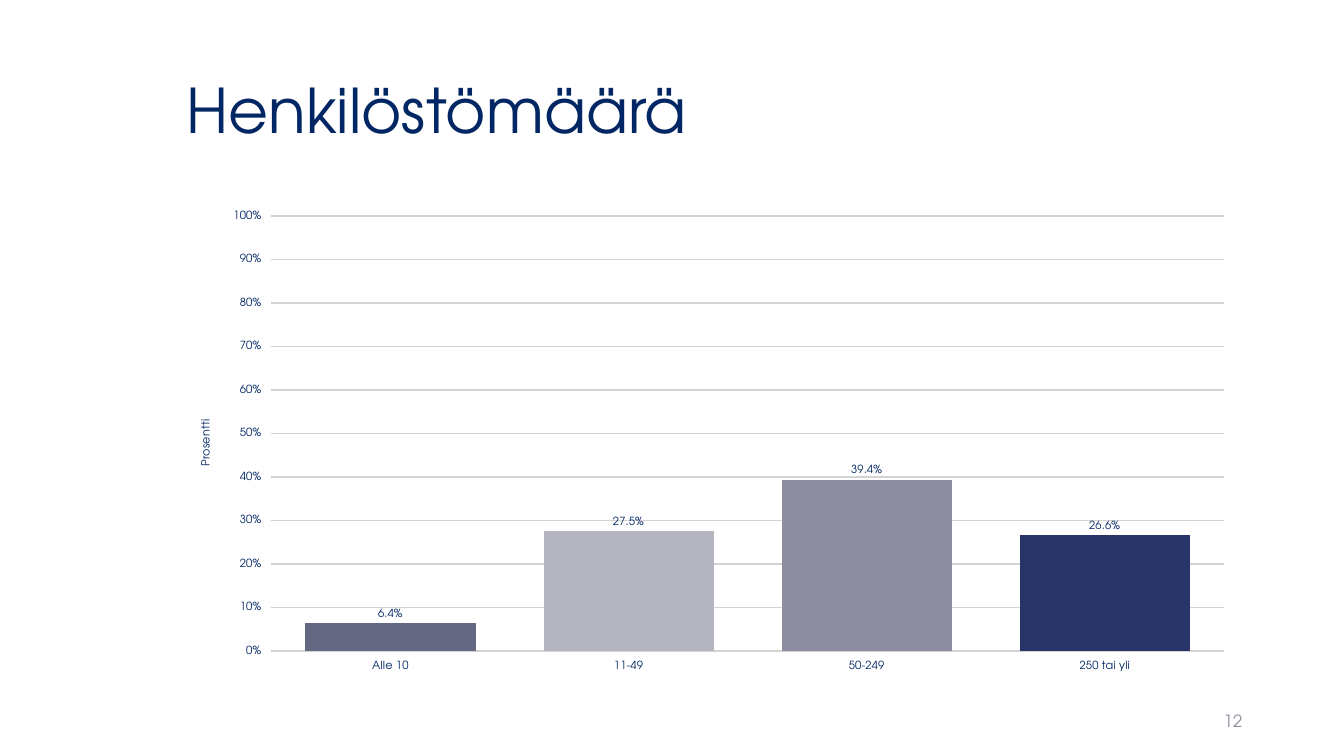
from dataclasses import dataclass

from lxml import etree
from pptx import Presentation
from pptx.chart.chart import Chart
from pptx.chart.data import CategoryChartData
from pptx.dml.color import RGBColor
from pptx.enum.chart import XL_CHART_TYPE, XL_LABEL_POSITION, XL_TICK_MARK
from pptx.enum.text import MSO_ANCHOR, PP_ALIGN
from pptx.oxml.ns import qn
from pptx.slide import Slide
from pptx.util import Inches, Pt

COLUMNS = XL_CHART_TYPE.COLUMN_CLUSTERED
OUTSIDE_END = XL_LABEL_POSITION.OUTSIDE_END
TICK_OUTSIDE = XL_TICK_MARK.OUTSIDE
MIDDLE = MSO_ANCHOR.MIDDLE
LEFT, RIGHT = PP_ALIGN.LEFT, PP_ALIGN.RIGHT

FONT = "TeX Gyre Adventor"
NAVY = RGBColor(0x00, 0x26, 0x63)
GREY = RGBColor(0x8C, 0x8E, 0x9F)
GRID = RGBColor(0xD3, 0xD3, 0xD3)


@dataclass(frozen=True)
class Label:
    text: str
    left: float
    top: float
    width: float
    height: float
    size: int
    color: RGBColor
    align: PP_ALIGN
    paragraph_format: dict


@dataclass(frozen=True)
class StaffGroup:
    name: str
    share: float
    color: RGBColor


LABELS = [
    Label("Henkilöstömäärä", 1.75, 0.4, 10.59, 1.45, 44, NAVY, LEFT, {"line_spacing": 0.9}),
    Label("12", 9.42, 6.95, 3, 0.4, 12, GREY, RIGHT, {"space_after": Pt(6)}),
]
STAFF_GROUPS = [
    StaffGroup("Alle 10", 0.064, RGBColor(0x64, 0x68, 0x83)),
    StaffGroup("11-49", 0.275, RGBColor(0xB4, 0xB5, 0xBF)),
    StaffGroup("50-249", 0.394, GREY),
    StaffGroup("250 tai yli", 0.266, RGBColor(0x29, 0x35, 0x68)),
]


def set_font(font, size: int, color: RGBColor) -> None:
    values = {"name": FONT, "size": Pt(size), "bold": False}
    for name, value in values.items():
        setattr(font, name, value)
    font.color.rgb = color


def add_label(page: Slide, label: Label) -> None:
    box = page.shapes.add_textbox(
        *map(Inches, (label.left, label.top, label.width, label.height))
    )
    frame = box.text_frame
    frame.word_wrap = True
    frame.vertical_anchor = MIDDLE
    para = frame.paragraphs[0]
    para.alignment = label.align
    for name, value in label.paragraph_format.items():
        setattr(para, name, value)
    span = para.add_run()
    span.text = label.text
    set_font(span.font, label.size, label.color)


def place(parent, index: int, values: dict) -> None:
    """Give a chart part a manual layout, in fractions of the chart."""
    for old in parent.findall(qn("c:layout")):
        parent.remove(old)
    layout = etree.Element(qn("c:layout"))
    manual = etree.SubElement(layout, qn("c:manualLayout"))
    for tag, value in values.items():
        etree.SubElement(manual, qn(f"c:{tag}")).set("val", str(value))
    parent.insert(index, layout)


def style_axes(chart: Chart) -> None:
    for axis in (chart.category_axis, chart.value_axis):
        axis.major_tick_mark = TICK_OUTSIDE
        axis.format.line.fill.background()
        set_font(axis.tick_labels.font, 8, NAVY)

    axis = chart.value_axis
    values = {"minimum_scale": 0, "maximum_scale": 1, "major_unit": 0.1}
    for name, value in values.items():
        setattr(axis, name, value)
    axis.tick_labels.number_format = "0%"
    axis.tick_labels.number_format_is_linked = False
    grid_line = axis.major_gridlines.format.line
    grid_line.color.rgb = GRID
    grid_line.width = Pt(1)

    frame = axis.axis_title.text_frame
    frame.text = "Prosentti"
    set_font(frame.paragraphs[0].runs[0].font, 8, NAVY)
    title = axis.axis_title._element
    body = title.find(".//" + qn("a:bodyPr"))
    body.set("rot", "-5400000")
    body.set("vert", "horz")
    place(title, 1, {"xMode": "edge", "yMode": "edge", "x": 0.02, "y": 0.45})


def add_staff_chart(page: Slide) -> None:
    data = CategoryChartData()
    data.categories = [group.name for group in STAFF_GROUPS]
    data.add_series("Series 1", [group.share for group in STAFF_GROUPS])
    chart = page.shapes.add_chart(
        COLUMNS, *map(Inches, (1.75, 2, 10.59, 4.76)), data
    ).chart
    chart.has_legend = False
    chart.has_title = False
    set_font(chart.font, 18, NAVY)
    style_axes(chart)

    plot = chart.plots[0]
    values = {"gap_width": 40, "overlap": -2, "vary_by_categories": False,
              "has_data_labels": True}
    for name, value in values.items():
        setattr(plot, name, value)
    for index, group in enumerate(STAFF_GROUPS):
        fill = plot.series[0].points[index].format.fill
        fill.solid()
        fill.fore_color.rgb = group.color

    labels = plot.data_labels
    values = {"show_value": True, "number_format": "0.0%",
              "number_format_is_linked": False, "position": OUTSIDE_END}
    for name, value in values.items():
        setattr(labels, name, value)
    set_font(labels.font, 8, NAVY)

    plot_area = chart._chartSpace.find(".//" + qn("c:plotArea"))
    place(plot_area, 0, {"layoutTarget": "inner", "xMode": "edge", "yMode": "edge",
                         "x": 0.089, "y": 0.03, "w": 0.892, "h": 0.907})


def main() -> None:
    deck = Presentation()
    deck.slide_width = Inches(13.33)
    deck.slide_height = Inches(7.5)
    page = deck.slides.add_slide(deck.slide_layouts[6])
    for label in LABELS:
        add_label(page, label)
    add_staff_chart(page)
    deck.save("out.pptx")


if __name__ == "__main__":
    main()
